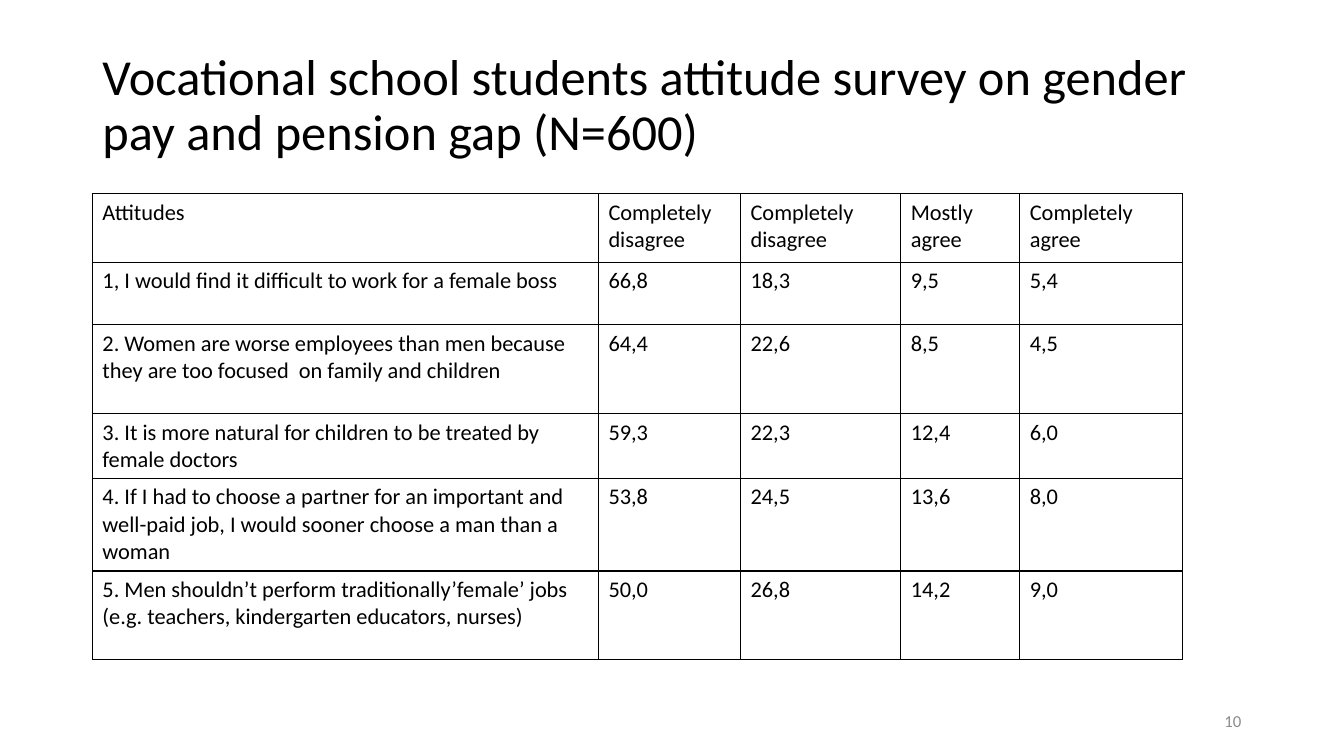
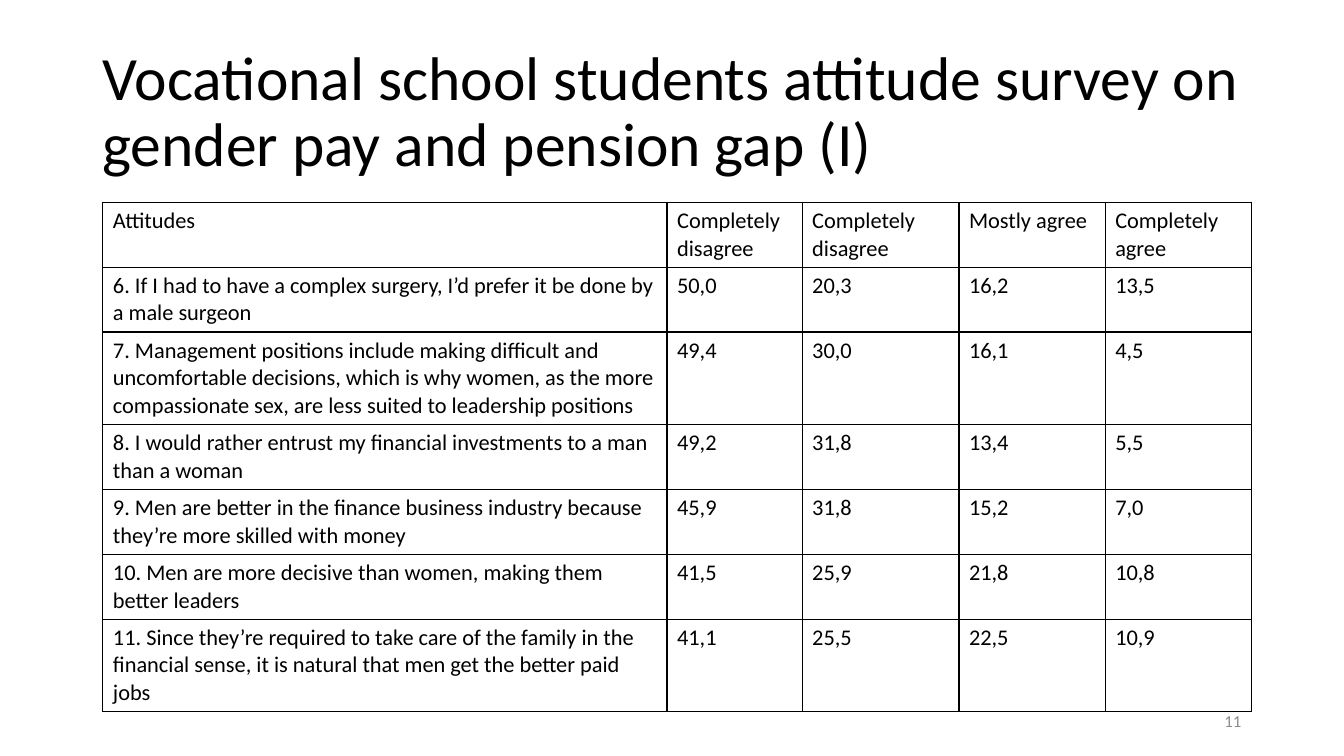
"""Build two slides with survey tables on the gender pay and pension gap."""
from copy import deepcopy

from lxml import etree
from pptx import Presentation
from pptx.dml.color import RGBColor
from pptx.enum.text import MSO_ANCHOR, MSO_AUTO_SIZE, PP_ALIGN
from pptx.oxml.ns import qn
from pptx.util import Pt

BLACK = RGBColor(0x00, 0x00, 0x00)
GREY = RGBColor(0x8C, 0x8C, 0x8C)
FONT = "Calibri"
LEFT, RIGHT = PP_ALIGN.LEFT, PP_ALIGN.RIGHT
MIDDLE = MSO_ANCHOR.MIDDLE
NO_FIT = MSO_AUTO_SIZE.NONE
HEAD = ["Attitudes", "Completely disagree", "Completely disagree",
        "Mostly agree", "Completely agree"]

PAGES = [
    {"title": "Vocational school students attitude survey on gender pay and pension gap (N=600)",
     "size": 36, "top": 24, "number": "10", "at": (66, 138.5),
     "cols": [361.5, 101.5, 114.5, 85, 116.5],
     "rows": [49, 44.5, 63.5, 46, 66, 63.5],
     "data": [
         ["1, I would find it difficult to work for a female boss",
          "66,8", "18,3", "9,5", "5,4"],
         ["2. Women are worse employees than men because they are too focused  on family and children",
          "64,4", "22,6", "8,5", "4,5"],
         ["3. It is more natural for children to be treated by female doctors",
          "59,3", "22,3", "12,4", "6,0"],
         ["4. If I had to choose a partner for an important and well-paid job, "
          "I would sooner choose a man than a woman",
          "53,8", "24,5", "13,6", "8,0"],
         ["5. Men shouldn’t perform traditionally’female’ jobs "
          "(e.g. teachers, kindergarten educators, nurses)",
          "50,0", "26,8", "14,2", "9,0"]]},
    {"title": "Vocational school students attitude survey on gender pay and pension gap (I)",
     "size": 44, "top": 29, "number": "11", "at": (73.5, 144.5),
     "cols": [403, 96.5, 112, 104.5, 104.5],
     "rows": [46, 46, 66, 46, 46, 46, 66],
     "data": [
         ["6. If I had to have a complex surgery, I’d prefer it be done by a male surgeon",
          "50,0", "20,3", "16,2", "13,5"],
         ["7. Management positions include making difficult and uncomfortable decisions, "
          "which is why women, as the more compassionate sex, are less suited to leadership positions",
          "49,4", "30,0", "16,1", "4,5"],
         ["8. I would rather entrust my financial investments to a man than a woman",
          "49,2", "31,8", "13,4", "5,5"],
         ["9. Men are better in the finance business industry because they’re more skilled with money",
          "45,9", "31,8", "15,2", "7,0"],
         ["10. Men are more decisive than women, making them better leaders",
          "41,5", "25,9", "21,8", "10,8"],
         ["11. Since they’re required to take care of the family in the financial sense, "
          "it is natural that men get the better paid jobs",
          "41,1", "25,5", "22,5", "10,9"]]},
]


def write(frame, text, size, color=BLACK, align=LEFT, space=1.0):
    frame.text = text
    para = frame.paragraphs[0]
    para.alignment, para.line_spacing = align, space
    font = para.runs[0].font
    for name, value in {"name": FONT, "size": Pt(size), "bold": False}.items():
        setattr(font, name, value)
    font.color.rgb = color


def place(shape, left, top, width, height):
    box = {"left": left, "top": top, "width": width, "height": height}
    for name, value in box.items():
        setattr(shape, name, Pt(value))
    frame = shape.text_frame
    look = {"vertical_anchor": MIDDLE, "auto_size": NO_FIT, "word_wrap": True}
    for name, value in look.items():
        setattr(frame, name, value)
    return frame


prs = Presentation()
prs.slide_width, prs.slide_height = Pt(960), Pt(540)
layout = prs.slide_layouts[5]
marker = next(s for s in layout.placeholders if s.placeholder_format.idx == 12)

for page in PAGES:
    slide = prs.slides.add_slide(layout)
    frame = place(slide.shapes.title, 66, page["top"], 828, 104.5)
    write(frame, page["title"], page["size"], space=0.9)

    slide.shapes.element.append(deepcopy(marker.element))
    number = next(s for s in slide.placeholders if s.placeholder_format.idx == 12)
    write(place(number, 678, 500.5, 216, 29), page["number"], 12, GREY, RIGHT)

    cols, rows = page["cols"], page["rows"]
    left, top = page["at"]
    grid = slide.shapes.add_table(len(rows), len(cols), Pt(left), Pt(top),
                                  Pt(sum(cols)), Pt(sum(rows))).table
    grid.first_row = grid.horz_banding = False
    for col, width in zip(grid.columns, cols):
        col.width = Pt(width)
    for row, height, texts in zip(grid.rows, rows, [HEAD] + page["data"]):
        row.height = Pt(height)
        for cell, text in zip(row.cells, texts):
            write(cell.text_frame, text, 16)
            props = cell._tc.get_or_add_tcPr()
            for side in ("lnL", "lnR", "lnT", "lnB"):
                line = etree.SubElement(props, qn("a:" + side), w=str(Pt(1)))
                fill = etree.SubElement(line, qn("a:solidFill"))
                etree.SubElement(fill, qn("a:srgbClr"), val=str(BLACK))
            cell.fill.background()

prs.save("out.pptx")
